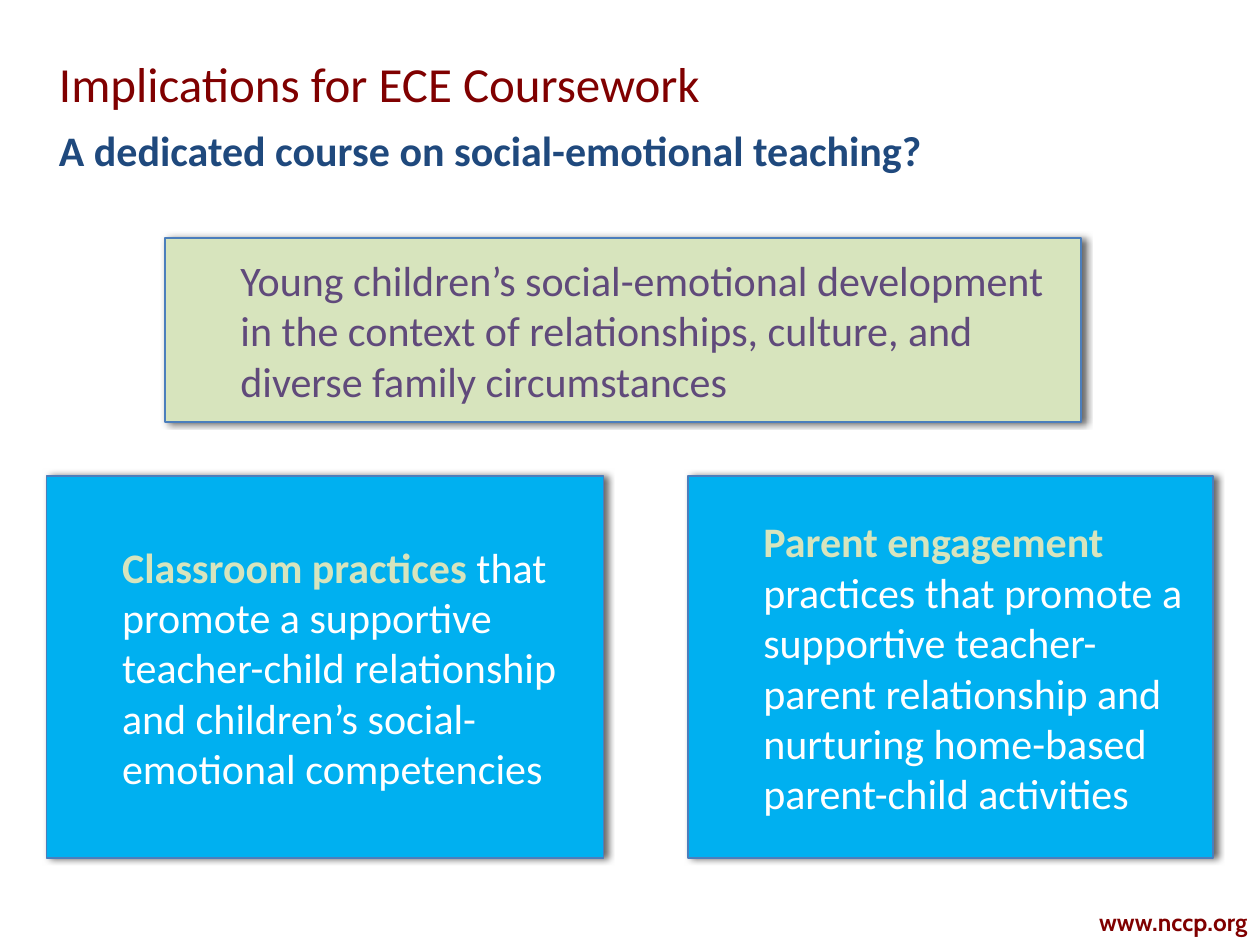
import pptx
import pptx.dml.color
import pptx.enum.shapes
import pptx.enum.text
import pptx.oxml
import pptx.oxml.ns
import pptx.util

Pt = pptx.util.Pt
RGBColor = pptx.dml.color.RGBColor
Align = pptx.enum.text.PP_ALIGN
Anchor = pptx.enum.text.MSO_ANCHOR

MAROON = RGBColor(0x80, 0x00, 0x00)
NAVY = RGBColor(0x1F, 0x49, 0x7D)
SKY = RGBColor(0x00, 0xB0, 0xF0)
SAGE = RGBColor(0xD7, 0xE4, 0xBD)
PURPLE = RGBColor(0x60, 0x4A, 0x7B)
OUTLINE = RGBColor(0x4B, 0x7E, 0xBC)
WHITE = RGBColor(0xFF, 0xFF, 0xFF)

LEFT = 26.64
CARD_TOP, CARD_HEIGHT = 272.16, 218.16


def set_font(font, size, color, bold=False, name="Calibri"):
    font.name = name
    font.size = Pt(size)
    font.bold = bold
    font.color.rgb = color


def add_label(page, bounds, text, size, color, bold=False, name="Calibri",
              anchor=Anchor.TOP, align=Align.LEFT, spacing=None):
    box = page.shapes.add_textbox(*map(Pt, bounds))
    box.text_frame.word_wrap = True
    box.text_frame.vertical_anchor = anchor
    para = box.text_frame.paragraphs[0]
    para.text = text
    para.alignment = align
    if spacing:
        para.line_spacing = Pt(spacing)
    set_font(para.font, size, color, bold, name)


def add_shadow(shape):
    shape.shadow.inherit = False
    effects = shape._element.spPr.find(pptx.oxml.ns.qn("a:effectLst"))
    effects.append(pptx.oxml.parse_xml(
        f'<a:outerShdw {pptx.oxml.ns.nsdecls("a")} blurRad="{Pt(4)}" '
        f'dist="{Pt(2)}" dir="0" rotWithShape="0">'
        '<a:srgbClr val="000000"><a:alpha val="60000"/></a:srgbClr>'
        '</a:outerShdw>'))


def add_card(page, bounds, fill, spans):
    """Add a shadowed card; spans holds (text, color, bold) tuples."""
    card = page.shapes.add_shape(
        pptx.enum.shapes.MSO_SHAPE.RECTANGLE, *map(Pt, bounds))
    card.fill.solid()
    card.fill.fore_color.rgb = fill
    card.line.color.rgb = OUTLINE
    card.line.width = Pt(1)
    add_shadow(card)
    card.text_frame.word_wrap = True
    card.text_frame.vertical_anchor = Anchor.MIDDLE
    para = card.text_frame.paragraphs[0]
    para.alignment = Align.LEFT
    para.level = 1
    properties = para._p.get_or_add_pPr()
    properties.set("marL", str(Pt(36)))
    properties.set("indent", "0")
    for text, color, bold in spans:
        span = para.add_run()
        span.text = text
        set_font(span.font, 24, color, bold)


def main():
    deck = pptx.Presentation()
    deck.slide_width, deck.slide_height = Pt(720), Pt(540)
    page = deck.slides.add_slide(deck.slide_layouts[6])

    # Footer address
    add_label(page, (599.76, 519.84, 120.24, 19.44), "www.nccp.org", 14, MAROON,
              bold=True, name="Cabin", anchor=Anchor.MIDDLE,
              align=Align.RIGHT, spacing=10.8)

    # Title and subtitle
    add_label(page, (LEFT, 18, 573.12, 49.68), "Implications for ECE Coursework",
              28, MAROON, anchor=Anchor.BOTTOM, spacing=43)
    add_label(page, (LEFT, 67.68, 666.72, 40),
              "A dedicated course on social-emotional teaching?",
              24, NAVY, bold=True)

    # Two practice cards
    add_card(page, (LEFT, CARD_TOP, 318.24, CARD_HEIGHT), SKY, [
        ("Classroom practices ", SAGE, True),
        ("that promote a supportive teacher-child relationship and "
         "children’s social-emotional competencies", WHITE, False)])
    add_card(page, (393.12, CARD_TOP, 300.24, CARD_HEIGHT), SKY, [
        ("Parent engagement ", SAGE, True),
        ("practices that promote a supportive teacher-parent relationship "
         "and nurturing home-based parent-child activities", WHITE, False)])

    # Overarching theme
    add_card(page, (94.32, 136.08, 523.44, 105.12), SAGE, [
        ("Young children’s social-emotional development in the context of "
         "relationships, culture, and diverse family circumstances",
         PURPLE, False)])

    deck.save("out.pptx")


if __name__ == "__main__":
    main()
